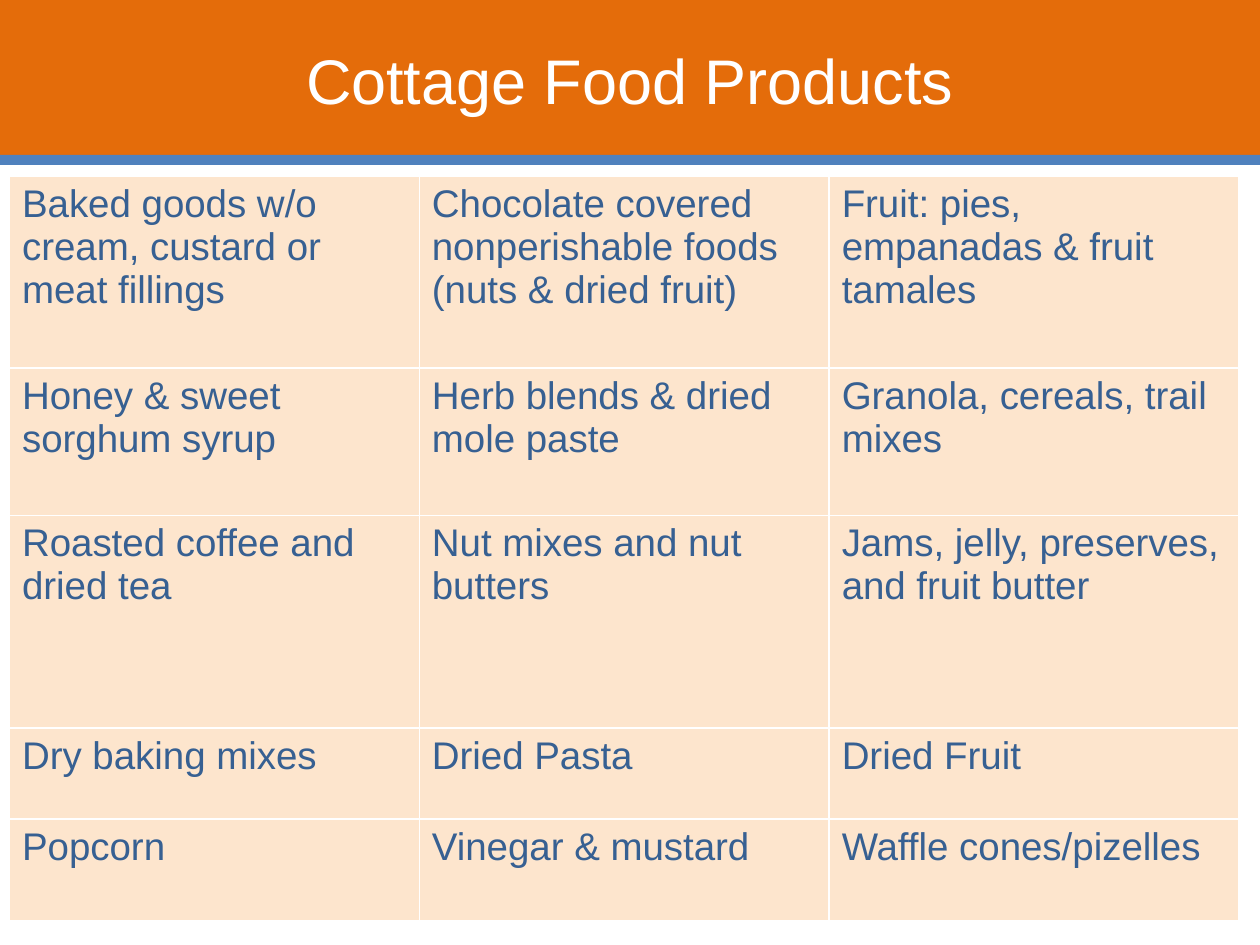
from lxml import etree
from pptx import Presentation
from pptx import util as u
from pptx.dml.color import RGBColor
from pptx.enum import shapes, text
from pptx.oxml import ns

COLORS = {
    "banner": "E46C0A",
    "rule": "4F81BD",
    "cell": "FDE5CD",
    "ink": "376092",
    "white": "FFFFFF",
}
COLUMNS, ROWS = 100, 75

PRODUCTS = [
    ["Baked goods w/o cream, custard or meat fillings",
     "Chocolate covered nonperishable foods (nuts & dried fruit)",
     "Fruit: pies, empanadas & fruit tamales"],
    ["Honey & sweet sorghum syrup",
     "Herb blends & dried mole paste",
     "Granola, cereals, trail mixes"],
    ["Roasted coffee and dried tea",
     "Nut mixes and nut butters",
     "Jams, jelly, preserves, and fruit butter"],
    ["Dry baking mixes", "Dried Pasta", "Dried Fruit"],
    ["Popcorn", "Vinegar & mustard", "Waffle cones/pizelles"],
]
ROW_HEIGHTS = [15.2, 11.7, 16.9, 7.2, 8.1]


class Deck:
    font = "Arial"

    def __init__(self, width, height):
        self.prs = Presentation()
        self.prs.slide_width = u.Inches(width)
        self.prs.slide_height = u.Inches(height)
        self.s = self.prs.slides.add_slide(self.prs.slide_layouts[6])

    def x(self, columns):
        return round(self.prs.slide_width * columns / COLUMNS)

    def y(self, rows):
        return round(self.prs.slide_height * rows / ROWS)

    def color(self, name):
        return RGBColor.from_string(COLORS[name])

    def add_text(self, tf, words, size, color, align=None):
        tf.word_wrap = True
        p = tf.paragraphs[0]
        p.alignment = align
        r = p.add_run()
        r.text = words
        r.font.name = self.font
        r.font.size = u.Pt(size)
        r.font.color.rgb = self.color(color)

    def band(self, top, height, fill):
        sp = self.s.shapes.add_shape(
            shapes.MSO_SHAPE.RECTANGLE, 0, self.y(top), self.x(COLUMNS), self.y(height))
        sp.shadow.inherit = False
        sp.fill.solid()
        sp.fill.fore_color.rgb = self.color(fill)
        sp.line.fill.background()
        return sp

    def title(self, words, height):
        tf = self.band(0, height, "banner").text_frame
        tf.vertical_anchor = text.MSO_ANCHOR.MIDDLE
        self.add_text(tf, words, 36, "white", text.PP_ALIGN.CENTER)

    def border(self, cell):
        tc_pr = cell._tc.get_or_add_tcPr()
        for i, side in enumerate(("lnL", "lnR", "lnT", "lnB")):
            ln = etree.Element(ns.qn(f"a:{side}"), w=str(u.Pt(1)))
            fill = etree.SubElement(ln, ns.qn("a:solidFill"))
            etree.SubElement(fill, ns.qn("a:srgbClr"), val=COLORS["white"])
            tc_pr.insert(i, ln)

    def table(self, left, top, column_width, row_heights, content):
        count = len(content[0])
        table = self.s.shapes.add_table(
            len(content), count, self.x(left), self.y(top),
            self.x(column_width * count), self.y(sum(row_heights))).table
        table.first_row = False
        table.horz_banding = False
        for column in table.columns:
            column.width = self.x(column_width)
        for row, height, entries in zip(table.rows, row_heights, content):
            row.height = self.y(height)
            for cell, words in zip(row.cells, entries):
                cell.fill.solid()
                cell.fill.fore_color.rgb = self.color("cell")
                self.border(cell)
                self.add_text(cell.text_frame, words, 22, "ink")


def main():
    deck = Deck(10, 7.5)
    deck.title("Cottage Food Products", 12.6)
    deck.band(12.3, 0.8, "rule")
    deck.table(0.75, 14, 32.53, ROW_HEIGHTS, PRODUCTS)
    deck.prs.save("out.pptx")


if __name__ == "__main__":
    main()
